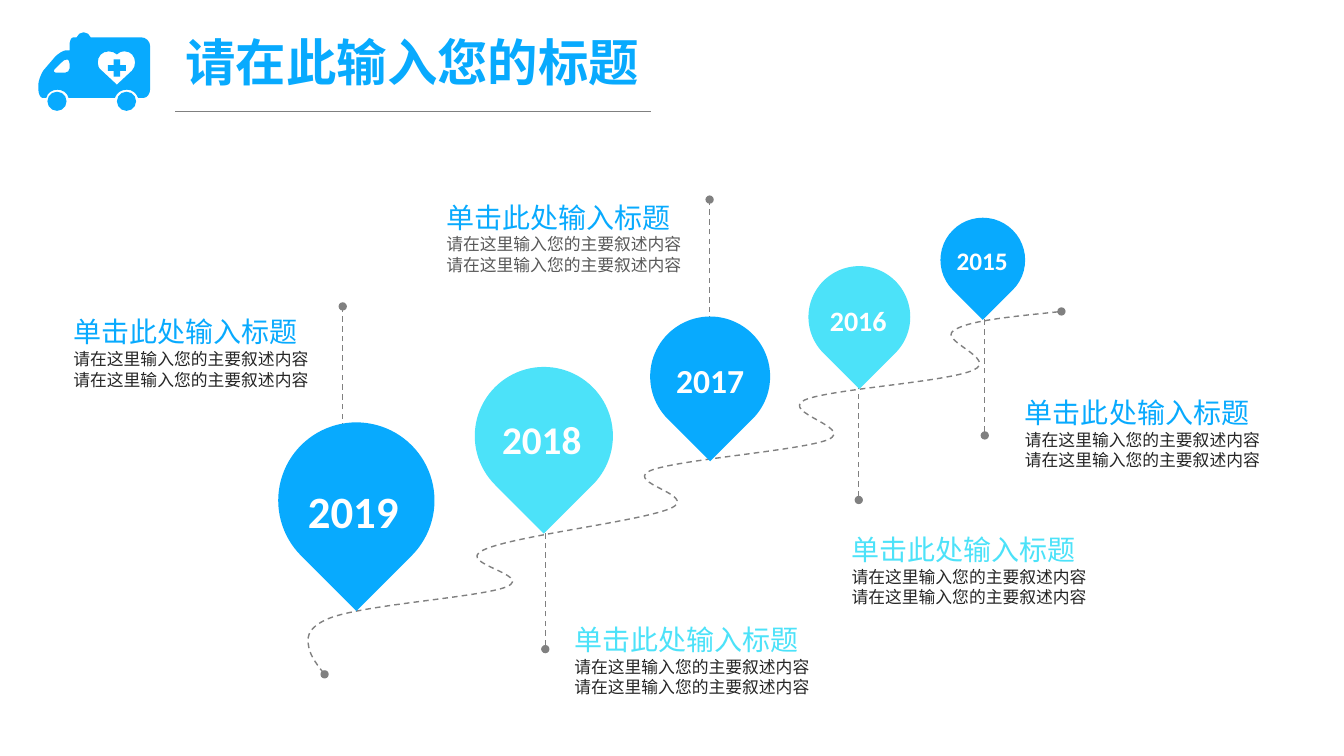
from collections import namedtuple

from lxml import etree
from pptx import Presentation
from pptx.dml.color import RGBColor
from pptx.enum.dml import MSO_LINE
from pptx.enum.shapes import MSO_CONNECTOR, MSO_SHAPE
from pptx.enum.text import MSO_ANCHOR, MSO_AUTO_SIZE, PP_ALIGN
from pptx.oxml.ns import qn
from pptx.util import Pt

PX = 9144  # one px is a hundredth of an inch
SLIDE_WIDTH, SLIDE_HEIGHT = 12192000, 6858000
LINE_HEIGHT = 1.22
STEM_LENGTH = 125

STRAIGHT = MSO_CONNECTOR.STRAIGHT
DASH = MSO_LINE.DASH
OVAL, CROSS, TEARDROP = MSO_SHAPE.OVAL, MSO_SHAPE.CROSS, MSO_SHAPE.TEAR
TOP = MSO_ANCHOR.TOP
NO_AUTOFIT = MSO_AUTO_SIZE.NONE
LEFT, CENTER = PP_ALIGN.LEFT, PP_ALIGN.CENTER

BLUE, CYAN, WHITE = "08AAFE", "4CE2F9", "FFFFFF"
GRAY, MID_GRAY, DARK = "808080", "595959", "262626"
LATIN, CHINESE = "Calibri", "Noto Sans CJK SC"

HEADING = "单击此处输入标题"
DETAIL = "请在这里输入您的主要叙述内容"

Milestone = namedtuple(
    "Milestone", "year pin color size year_box stem label detail_color")
MILESTONES = [
    Milestone("2015", (933, 216, 84), BLUE, 18, (926, 238, 97, 40),
              (977, 307), (1007, 387), DARK),
    Milestone("2016", (802, 264, 101), CYAN, 20, (803, 296, 97, 44),
              (852, 371), (835, 523), DARK),
    Milestone("2017", (645, 314, 119), BLUE, 24, (656, 352, 97, 50),
              (704, 198), (433, 193), MID_GRAY),
    Milestone("2018", (471, 364, 137), CYAN, 28, (481, 407, 113, 57),
              (541, 519), (560, 612), DARK),
    Milestone("2019", (276, 419, 155), BLUE, 32, (285, 475, 131, 64),
              (340, 304), (63, 307), DARK),
]

# Outlines: a pair is a straight step, six numbers are a cubic curve.
ROAD = [
    (1053, 309), (1006, 314, 960, 318, 946, 328),
    (931, 338, 990, 356, 966, 367), (941, 379, 822, 386, 798, 397),
    (774, 409, 847, 424, 822, 436), (796, 447, 671, 456, 645, 467),
    (619, 479, 693, 491, 666, 504), (638, 517, 506, 532, 479, 546),
    (452, 559, 529, 570, 503, 582), (477, 593, 353, 600, 323, 615),
    (308, 622, 304, 630, 306, 640), (307, 649, 314, 659, 322, 669),
]
VAN_BODY = [
    (140, 37), (90, 37), (89, 34, 86, 32, 83, 32), (80, 32, 77, 34, 76, 37),
    (73, 37), (71, 37, 69, 40, 69, 43), (69, 50), (65, 50),
    (63, 50, 58, 53, 55, 56), (43, 70), (41, 73, 38, 80, 38, 84), (38, 88),
    (38, 93, 40, 97, 42, 97), (46, 97), (47, 92, 52, 89, 57, 89),
    (62, 89, 67, 92, 68, 97), (114, 97), (116, 92, 120, 89, 126, 89),
    (131, 89, 135, 92, 137, 97), (143, 97), (146, 97, 149, 93, 149, 88),
    (149, 46), (149, 41, 145, 37, 140, 37),
]
VAN_WINDOW = [
    (69, 68), (69, 70, 67, 72, 65, 72), (55, 72), (53, 72, 53, 70, 54, 69),
    (61, 62), (62, 60, 65, 59, 67, 59), (68, 59, 69, 61, 69, 63),
]
VAN_HEART = [
    (131, 70), (116, 84), (101, 70), (98, 68, 97, 65, 97, 62),
    (97, 56, 101, 51, 108, 51), (111, 51, 114, 52, 116, 54),
    (118, 52, 120, 51, 124, 51), (130, 51, 134, 56, 134, 62),
    (134, 65, 133, 68, 131, 70),
]


def rgb(color):
    return RGBColor.from_string(color)


def step_points(step):
    """Split a step into its one or three points."""
    return [step[index:index + 2] for index in range(0, len(step), 2)]


class SlideBuilder:
    def __init__(self, deck):
        self.slide = deck.slides.add_slide(deck.slide_layouts[5])
        self.shapes = self.slide.shapes

    def format_paragraph(self, para, size, color, font, bold=False, align=LEFT):
        para.alignment = align
        if font == CHINESE:
            para.line_spacing = Pt(round(size * LINE_HEIGHT, 1))
        for span in para.runs:
            span.font.size = Pt(size)
            span.font.bold = bold
            span.font.color.rgb = rgb(color)
            span.font.name = font
            east_asian = etree.SubElement(span.font._element, qn("a:ea"))
            east_asian.set("typeface", font)

    def title(self, text, left, top, width, height):
        box = self.shapes.title
        box.left, box.top = left * PX, top * PX
        box.width, box.height = width * PX, height * PX
        frame = box.text_frame
        frame.text = text
        frame.word_wrap = False
        frame.auto_size = NO_AUTOFIT
        frame.vertical_anchor = TOP
        self.format_paragraph(frame.paragraphs[0], 36, BLUE, CHINESE, True)

    def text_frame(self, left, top, width, height, wrap):
        box = self.shapes.add_textbox(left * PX, top * PX, width * PX, height * PX)
        box.text_frame.word_wrap = wrap
        return box.text_frame

    def year(self, text, bounds, size):
        frame = self.text_frame(*bounds, True)
        frame.text = text
        self.format_paragraph(frame.paragraphs[0], size, WHITE, LATIN, True, CENTER)

    def label(self, left, top, heading_color, detail_color):
        frame = self.text_frame(left, top, 256, 138, False)
        frame.text = "\n".join([HEADING, DETAIL, DETAIL])
        heading, *details = frame.paragraphs
        self.format_paragraph(heading, 20, heading_color, CHINESE)
        for para in details:
            self.format_paragraph(para, 12, detail_color, CHINESE)

    def fill(self, shape, color):
        shape.shadow.inherit = False
        shape.fill.solid()
        shape.fill.fore_color.rgb = rgb(color)
        shape.line.fill.background()

    def preset(self, kind, left, top, width, height, color):
        shape = self.shapes.add_shape(
            kind, left * PX, top * PX, width * PX, height * PX)
        self.fill(shape, color)
        return shape

    def freeform(self, outlines, close):
        """Draw through all points, then turn each curve's three steps into one."""
        builder = self.shapes.build_freeform(*outlines[0][0], scale=PX)
        for index, (start, *steps) in enumerate(outlines):
            if index:
                builder.move_to(*start)
            points = [point for step in steps for point in step_points(step)]
            builder.add_line_segments(points, close=close)
        shape = builder.convert_to_shape()
        shape.shadow.inherit = False
        segments = iter(list(shape._element.iter(qn("a:lnTo"))))
        for step in (step for outline in outlines for step in outline[1:]):
            first, *others = [next(segments) for _ in step_points(step)]
            if others:
                first.tag = qn("a:cubicBezTo")
            for segment in others:
                first.append(segment[0])
                segment.getparent().remove(segment)
        return shape

    def dash_with_dots(self, shape):
        """Give a line gray dashes and a round dot at both ends."""
        shape.line.color.rgb = rgb(GRAY)
        shape.line.width = Pt(1)
        shape.line.dash_style = DASH
        outline = shape._element.spPr.find(qn("a:ln"))
        for end in ("a:headEnd", "a:tailEnd"):
            etree.SubElement(outline, qn(end)).set("type", "oval")

    def line(self, x1, y1, x2, y2):
        connector = self.shapes.add_connector(
            STRAIGHT, x1 * PX, y1 * PX, x2 * PX, y2 * PX)
        connector.line.color.rgb = rgb(GRAY)
        connector.line.width = Pt(0.5)
        etree.SubElement(connector._element.spPr, qn("a:effectLst"))
        return connector

    def road(self):
        shape = self.freeform([ROAD], False)
        shape.fill.background()
        self.dash_with_dots(shape)

    def ambulance(self):
        cross = self.preset(CROSS, 107, 59, 18, 17, BLUE)
        cross.adjustments[0] = 0.34
        for left in (47, 116):
            self.preset(OVAL, left, 91, 19, 19, BLUE)
        self.fill(self.freeform([VAN_BODY, VAN_WINDOW, VAN_HEART], True), BLUE)


def main():
    deck = Presentation()
    deck.slide_width, deck.slide_height = SLIDE_WIDTH, SLIDE_HEIGHT
    builder = SlideBuilder(deck)
    builder.title("请在此输入您的标题", 174, 25, 476, 71)
    builder.line(174, 110, 646, 110)
    builder.ambulance()
    for milestone in MILESTONES:
        x, top = milestone.stem
        builder.dash_with_dots(builder.line(x, top + STEM_LENGTH, x, top))
    builder.road()
    for milestone in MILESTONES:
        left, top, side = milestone.pin
        pin = builder.preset(TEARDROP, left, top, side, side, milestone.color)
        pin.rotation = 135
        builder.year(milestone.year, milestone.year_box, milestone.size)
        builder.label(*milestone.label, milestone.color, milestone.detail_color)
    deck.save("out.pptx")


if __name__ == "__main__":
    main()
